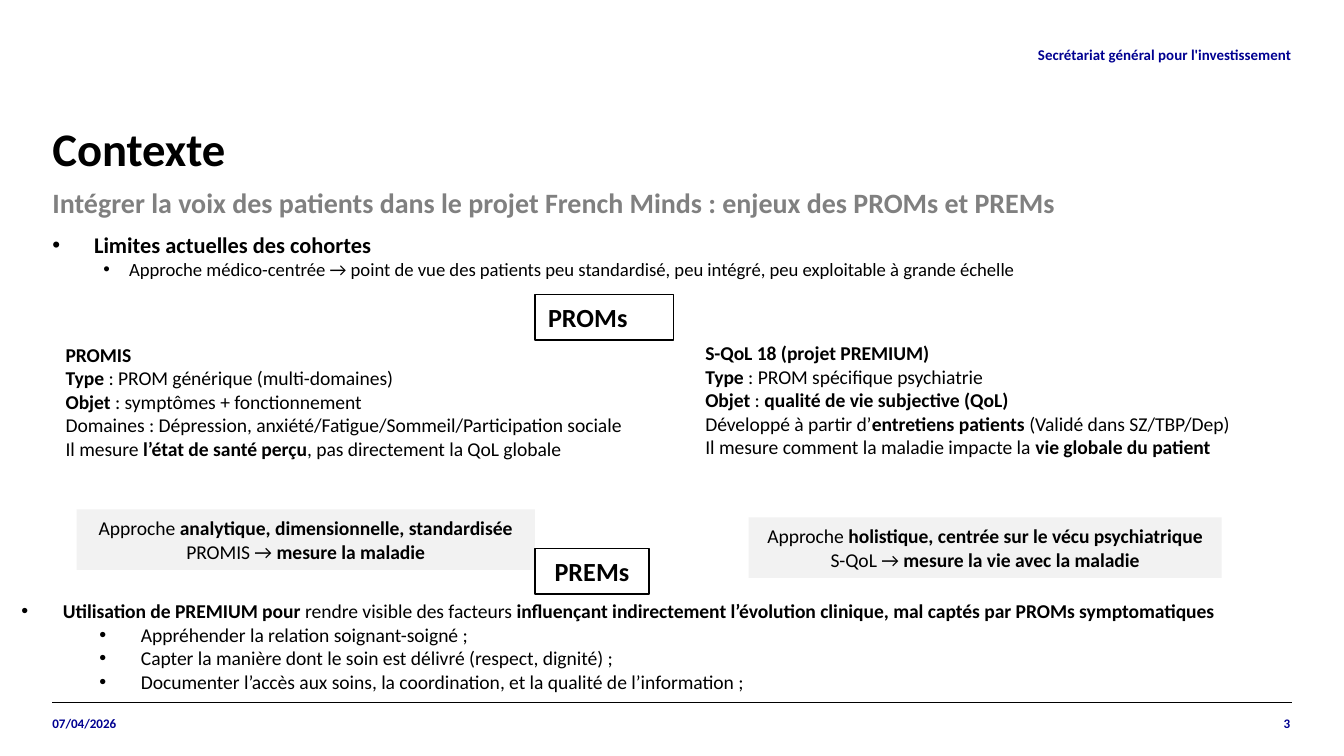
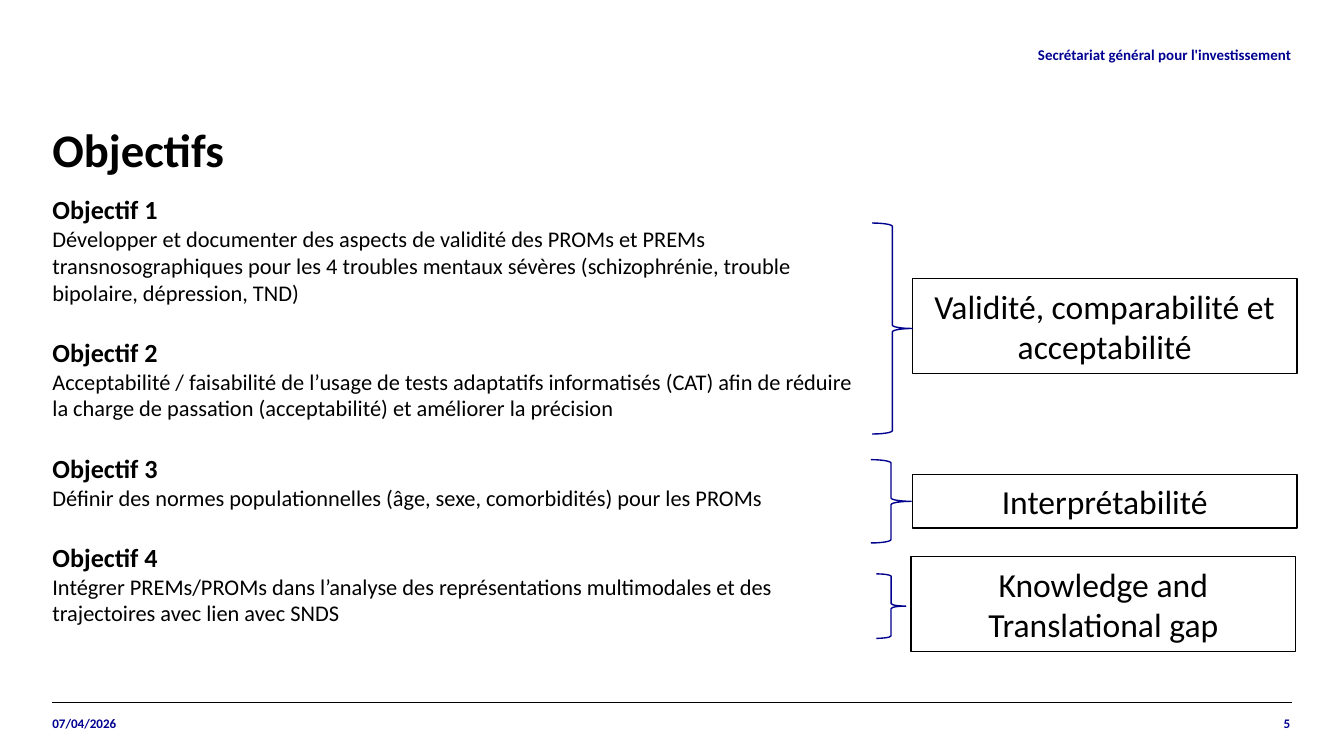
from lxml import etree
from pptx import Presentation
from pptx.dml.color import RGBColor
from pptx.enum import shapes, text
from pptx.oxml.ns import qn
from pptx.util import Inches, Pt

# Shared look
FONT = "Calibri"
BLACK, NAVY, BRACE, GREY, PALE = "000000", "000091", "00008E", "808080", "F2F2F2"
LEFT, RIGHT, FOOT_Y = 0.39, 9.61, 5.23
DATE = "07/04/2026"
OFFICE = "Secrétariat général pour l'investissement"
ALIGN = {"l": text.PP_ALIGN.LEFT, "c": text.PP_ALIGN.CENTER, "r": text.PP_ALIGN.RIGHT}

# Content: ** switches bold on and off
SUBTITLE = "Intégrer la voix des patients dans le projet French Minds : enjeux des PROMs et PREMs"
LIMITS = [
    ("**Limites actuelles des cohortes**", dict(size=12, bullet=(0.31, 0.31))),
    ("Approche médico-centrée → point de vue des patients peu standardisé, peu intégré, "
     "peu exploitable à grande échelle", dict(size=10, bullet=(0.57, 0.19), level=1)),
]
SCALES = [
    ((0.39, 2.5, 4.44, 0.98), [
        "**PROMIS**",
        "**Type** : PROM générique (multi-domaines)",
        "**Objet** : symptômes + fonctionnement",
        "Domaines : Dépression, anxiété/Fatigue/Sommeil/Participation sociale",
        "Il mesure **l’état de santé perçu**, pas directement la QoL globale",
    ]),
    ((5.15, 2.49, 4.67, 0.98), [
        "**S-QoL 18 (projet PREMIUM)**",
        "**Type** : PROM spécifique psychiatrie",
        "**Objet** : **qualité de vie subjective (QoL)**",
        "Développé à partir d’**entretiens patients** (Validé dans SZ/TBP/Dep)",
        "Il mesure comment la maladie impacte la **vie globale du patient**",
    ]),
]
APPROACHES = [
    ((0.57, 3.79, 3.41, 0.45), ["Approche **analytique, dimensionnelle, standardisée**",
                                "PROMIS → **mesure la maladie**"]),
    ((5.57, 3.85, 3.52, 0.45), ["Approche **holistique, centrée sur le vécu psychiatrique**",
                                "S-QoL → **mesure la vie avec la maladie**"]),
]
LABELS = [("PROMs", (3.98, 2.19, 1.03, 0.34), "l"), ("PREMs", (3.98, 4.08, 0.85, 0.34), "c")]
PREMIUM = ("**Utilisation de PREMIUM pour **rendre visible des facteurs **influençant "
           "indirectement l’évolution clinique, mal captés par PROMs symptomatiques**")
PREMIUM_USES = [
    "Appréhender la relation soignant-soigné ;",
    "Capter la manière dont le soin est délivré (respect, dignité) ;",
    "Documenter l’accès aux soins, la coordination, et la qualité de l’information ;",
]
OBJECTIVES = [
    ["Développer et documenter des aspects de validité des PROMs et PREMs transnosographiques "
     "pour les 4 troubles mentaux sévères (schizophrénie, trouble bipolaire, dépression, TND)"],
    ["Acceptabilité / faisabilité de l’usage de tests adaptatifs informatisés (CAT) afin de "
     "réduire la charge de passation (acceptabilité) et améliorer la précision"],
    ["Définir des normes populationnelles (âge, sexe, comorbidités) pour les PROMs"],
    ["Intégrer PREMs/PROMs dans l’analyse des représentations multimodales et des",
     "trajectoires avec lien avec SNDS"],
]
# Outcome, its box, its brace
OUTCOMES = [
    ("Validité, comparabilité et acceptabilité", (6.79, 2.07, 2.86, 0.71), (6.49, 1.66, 0.3, 1.57)),
    ("Interprétabilité", (6.79, 3.53, 2.86, 0.4), (6.48, 3.42, 0.3, 0.62)),
    ("Knowledge and Translational gap", (6.78, 4.14, 2.86, 0.71), (6.52, 4.27, 0.22, 0.48)),
]


def rgb(color):
    return RGBColor.from_string(color)


def set_bullet(p, indent, hanging):
    pPr = p._p.get_or_add_pPr()
    pPr.set("marL", str(Inches(indent)))
    pPr.set("indent", str(-Inches(hanging)))
    etree.SubElement(pPr, qn("a:buFont")).set("typeface", "Arial")
    etree.SubElement(pPr, qn("a:buChar")).set("char", "•")


def write(sp, lines, size=10.5, color=BLACK, align="l", anchor="t", inset=True, spacing=None):
    """Fill a shape with lines, each a string or a (string, paragraph options) pair."""
    tf = sp.text_frame
    tf.word_wrap = True
    tf.vertical_anchor = text.MSO_ANCHOR.MIDDLE if anchor == "m" else text.MSO_ANCHOR.TOP
    if not inset:
        tf.margin_left = tf.margin_right = tf.margin_top = tf.margin_bottom = 0
    for i, line in enumerate(lines):
        words, opts = (line, {}) if isinstance(line, str) else line
        p = tf.paragraphs[0] if i == 0 else tf.add_paragraph()
        p.level = opts.get("level", 0)
        p.alignment = ALIGN[align]
        if spacing:
            p.line_spacing = spacing
        if "before" in opts:
            p.space_before = Pt(opts["before"])
        if "bullet" in opts:
            set_bullet(p, *opts["bullet"])
        for n, part in enumerate(words.split("**")):
            if part:
                r = p.add_run()
                r.text = part
                r.font.name, r.font.size = FONT, Pt(opts.get("size", size))
                r.font.bold = n % 2 == 1
                r.font.color.rgb = rgb(color)


def add_text(s, box, lines, **fmt):
    write(s.shapes.add_textbox(*map(Inches, box)), lines, **fmt)


def add_box(s, box, kind=shapes.MSO_SHAPE.RECTANGLE, fill=None, line=None):
    sp = s.shapes.add_shape(kind, *map(Inches, box))
    sp.shadow.inherit = False
    if fill:
        sp.fill.solid()
        sp.fill.fore_color.rgb = rgb(fill)
    else:
        sp.fill.background()
    if line:
        sp.line.color.rgb = rgb(line)
        sp.line.width = Pt(0.75)
    else:
        sp.line.fill.background()
    return sp


def add_slide(prs, title, number, title_y, anchor):
    s = prs.slides.add_slide(prs.slide_layouts[6])
    # Footer rule
    rule = s.shapes.add_connector(shapes.MSO_CONNECTOR.STRAIGHT, Inches(LEFT), Inches(FOOT_Y),
                                  Inches(RIGHT), Inches(FOOT_Y))
    rule.line.color.rgb = rgb(BLACK)
    rule.line.width = Pt(0.5)
    etree.SubElement(rule._element.spPr, qn("a:effectLst"))
    # Title, date, office and page number
    add_text(s, (LEFT, title_y, 9.21, 0.59), [f"**{title}**"], size=25, anchor=anchor,
             inset=False, spacing=0.9)
    for words, box, size, align in [
        (DATE, (LEFT, FOOT_Y, 1.34, 0.3), 7, "l"),
        (OFFICE, (1.87, 0.21, 7.74, 0.39), 8, "r"),
        (number, (9.09, FOOT_Y, 0.51, 0.3), 7, "r"),
    ]:
        add_text(s, box, [f"**{words}**"], size=size, color=NAVY, align=align, anchor="m",
                 inset=False)
    return s


def context_slide(prs):
    s = add_slide(prs, "Contexte", "3", 0.83, "m")
    add_text(s, (LEFT, 1.38, 9.21, 0.26), [f"**{SUBTITLE}**"], size=15, color=GREY, inset=False)
    add_text(s, (LEFT, 1.72, 9.21, 0.49), LIMITS, inset=False)
    # Framed label, the two scales, their approaches, framed label
    proms, prems = LABELS
    add_label(s, *proms)
    for box, lines in SCALES:
        add_text(s, box, lines)
    for box, lines in APPROACHES:
        write(add_box(s, box, fill=PALE), lines, align="c")
    add_label(s, *prems)
    # Uses of PREMIUM
    uses = [(use, dict(bullet=(0.89, 0.31), level=2)) for use in PREMIUM_USES]
    add_text(s, (0.06, 4.41, 9.72, 0.81), [(PREMIUM, dict(bullet=(0.31, 0.31)))] + uses)


def add_label(s, label, box, align):
    write(add_box(s, box, line=BLACK), [f"**{label}**"], size=14, align=align)


def objectives_slide(prs):
    s = add_slide(prs, "Objectifs", "5", 0.95, "t")
    # Numbered objectives
    lines = []
    for n, details in enumerate(OBJECTIVES, 1):
        gap = dict(before=16.5) if n > 1 else {}
        lines.append((f"**Objectif {n}**", dict(size=14, **gap)))
        lines += details
    add_text(s, (LEFT, 1.44, 6.1, 3.58), lines, size=12, inset=False)
    # Outcomes with their braces
    for outcome, box, brace in OUTCOMES:
        write(add_box(s, box, line=BLACK), [outcome], size=18, align="c", anchor="m")
        add_box(s, brace, shapes.MSO_SHAPE.RIGHT_BRACE, line=BRACE)


def main():
    prs = Presentation()
    # 16:9 page
    prs.slide_width = Inches(10)
    prs.slide_height = prs.slide_width * 9 // 16
    context_slide(prs)
    objectives_slide(prs)
    prs.save("out.pptx")


if __name__ == "__main__":
    main()
